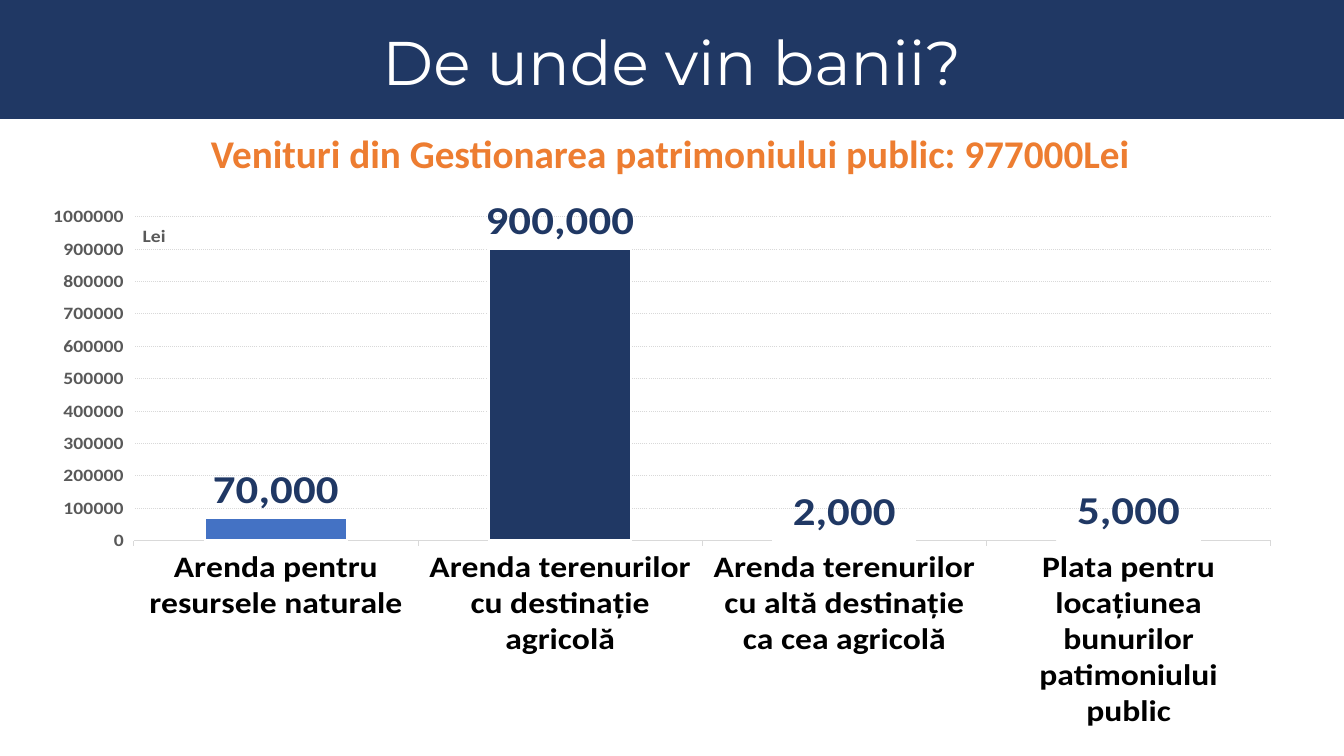
from pptx import Presentation
from pptx.chart.data import CategoryChartData
from pptx.dml.color import RGBColor
from pptx.enum.chart import XL_CHART_TYPE as CHART, XL_LABEL_POSITION as LABEL, XL_TICK_MARK as TICK
from pptx.enum.dml import MSO_LINE
from pptx.enum.shapes import MSO_SHAPE as SHAPE
from pptx.enum.text import MSO_ANCHOR as ANCHOR, PP_ALIGN as ALIGN
from pptx.oxml import parse_xml
from pptx.oxml.ns import nsdecls
from pptx.util import Pt

EMU_PER_PX = 914400 / 100.8
NAVY = RGBColor(0x20, 0x38, 0x64)
BLUE = RGBColor(0x44, 0x72, 0xC4)
PALE_BLUE = RGBColor(0xB4, 0xC7, 0xE7)
ORANGE = RGBColor(0xED, 0x7D, 0x31)
GREY = RGBColor(0x59, 0x59, 0x59)
LIGHT_GREY = RGBColor(0xD9, 0xD9, 0xD9)
WHITE = RGBColor(0xFF, 0xFF, 0xFF)
BLACK = RGBColor(0, 0, 0)

INCOME = [
    ("Arenda pentru resursele naturale", 70000, BLUE),
    ("Arenda terenurilor cu destinație agricolă", 900000, NAVY),
    ("Arenda terenurilor cu altă destinație ca cea agricolă", 2000, PALE_BLUE),
    ("Plata pentru locațiunea bunurilor patimoniului public", 5000, BLUE),
]


def px(n):
    return round(n * EMU_PER_PX)


def box(*lengths):
    return [px(n) for n in lengths]


def set_font(font, size, color, bold=True, name="Calibri"):
    font.size = Pt(size)
    font.bold = bold
    font.name = name
    font.color.rgb = color


def set_line(line, color, width):
    line.color.rgb = color
    line.width = Pt(width)


def add_banner(slide, x, y, w, h):
    sp = slide.shapes.add_shape(SHAPE.RECTANGLE, *box(x, y, w, h))
    sp.shadow.inherit = False
    sp.fill.solid()
    sp.fill.fore_color.rgb = NAVY
    sp.line.fill.background()


def add_text(slide, text, x, y, w, h, size, color, bold, name, spacing=1.0):
    sp = slide.shapes.add_textbox(*box(x, y, w, h))
    tf = sp.text_frame
    tf.word_wrap = True
    tf.vertical_anchor = ANCHOR.MIDDLE
    tf.text = text
    p = tf.paragraphs[0]
    p.alignment = ALIGN.CENTER
    p.line_spacing = spacing
    set_font(p.runs[0].font, size, color, bold, name)


def manual_layout(x, y, extra=""):
    return parse_xml(
        f'<c:layout {nsdecls("c")}><c:manualLayout>{extra and "<c:layoutTarget val=" + chr(34) + "inner" + chr(34) + "/>"}'
        f'<c:xMode val="edge"/><c:yMode val="edge"/><c:x val="{x}"/><c:y val="{y}"/>{extra}'
        '</c:manualLayout></c:layout>')


def replace_layout(parent, layout, index):
    for old in parent.xpath("./c:layout"):
        parent.remove(old)
    parent.insert(index, layout)


def style_axes(chart):
    cat = chart.category_axis
    cat.major_tick_mark = TICK.OUTSIDE
    set_font(cat.tick_labels.font, 24, BLACK)
    set_line(cat.format.line, LIGHT_GREY, 0.75)

    val = chart.value_axis
    val.minimum_scale, val.maximum_scale, val.major_unit = 0, 1000000, 100000
    val.major_tick_mark = TICK.OUTSIDE
    val.format.line.fill.background()
    val.tick_labels.number_format = "0"
    val.tick_labels.number_format_is_linked = False
    set_font(val.tick_labels.font, 14, GREY)
    grid = val.major_gridlines.format.line
    set_line(grid, LIGHT_GREY, 0.75)
    grid.dash_style = MSO_LINE.ROUND_DOT

    title = val.axis_title
    tf = title.text_frame
    tf.text = "Lei"
    set_font(tf.paragraphs[0].runs[0].font, 14, GREY)
    body = title.element.xpath(".//a:bodyPr")[0]
    body.set("rot", "0")
    body.set("vert", "horz")
    replace_layout(title.element, manual_layout(0.09, 0.08), 1)


def style_columns(plot):
    plot.gap_width = 100
    plot.vary_by_categories = False
    series = plot.series[0]
    series.invert_if_negative = False
    series.format.fill.solid()
    series.format.fill.fore_color.rgb = BLUE
    set_line(series.format.line, WHITE, 1.5)
    for i, (_, _, color) in enumerate(INCOME):
        fmt = series.points[i].format
        fmt.fill.solid()
        fmt.fill.fore_color.rgb = color
        set_line(fmt.line, WHITE, 1.5)
    labels = series.data_labels
    labels.show_value = True
    labels.number_format = "#,##0"
    labels.number_format_is_linked = False
    labels.position = LABEL.OUTSIDE_END
    set_font(labels.font, 32, NAVY)


def add_income_chart(slide, x, y, w, h):
    data = CategoryChartData()
    data.categories = [name for name, _, _ in INCOME]
    data.add_series("Series 1", [value for _, value, _ in INCOME])
    chart = slide.shapes.add_chart(CHART.COLUMN_CLUSTERED, *box(x, y, w, h), data).chart
    chart.has_legend = False
    chart.has_title = False
    set_font(chart.font, 10, BLACK, False)
    style_axes(chart)
    style_columns(chart.plots[0])
    area = chart.element.xpath("./c:chart/c:plotArea")[0] if hasattr(chart, "element") else chart._chartSpace.chart.plotArea
    replace_layout(area, manual_layout(0.086, 0.072, '<c:w val="0.882"/><c:h val="0.67"/>'), 0)


def main():
    prs = Presentation()
    prs.slide_width, prs.slide_height = px(1344), px(756)
    slide = prs.slides.add_slide(prs.slide_layouts[6])
    add_income_chart(slide, 23, 182, 1289, 548)
    add_banner(slide, 0, 0, 1344, 119)
    add_text(slide, "De unde vin banii?", 17, 25, 1310, 82, 44, WHITE, False, "Montserrat", 0.9)
    add_text(slide, "Venituri din Gestionarea patrimoniului public: 977000Lei",
             18, 124, 1304, 57, 28, ORANGE, True, "Calibri")
    prs.save("out.pptx")


if __name__ == "__main__":
    main()
